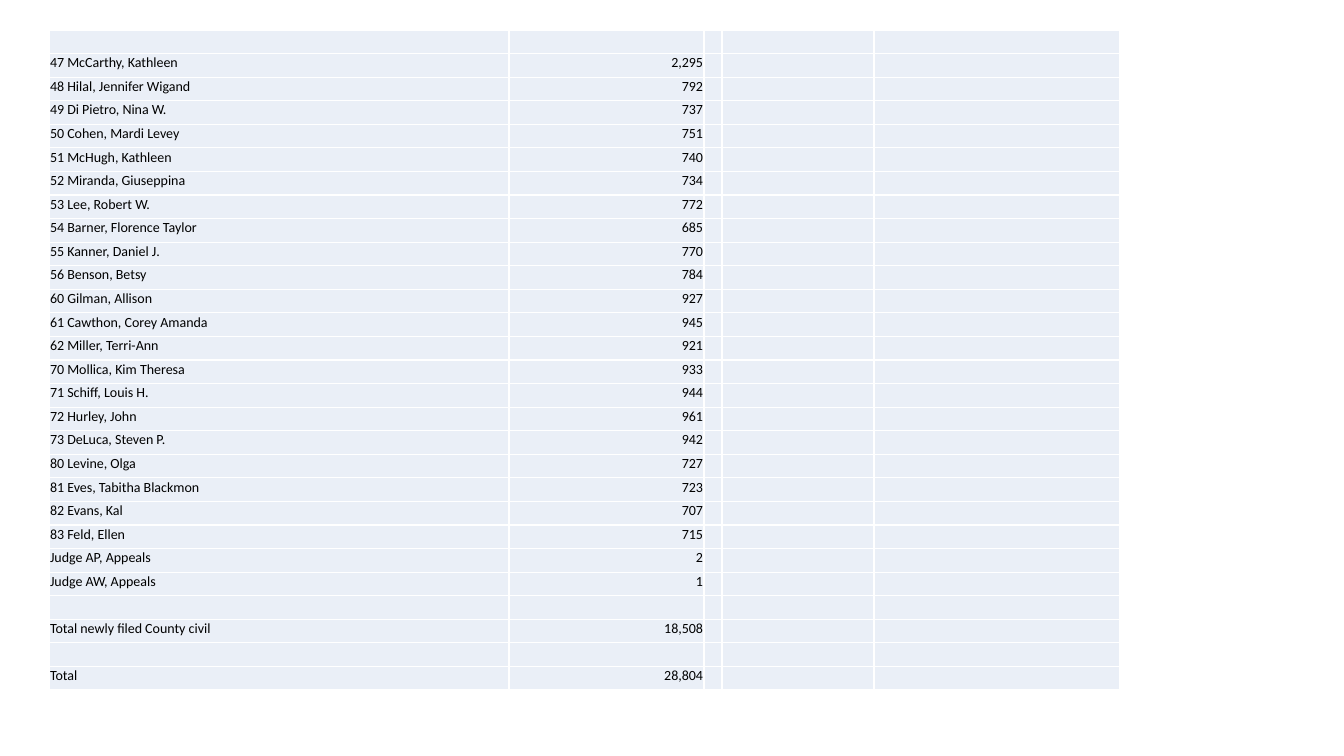
from lxml.etree import SubElement
from pptx import Presentation
from pptx.dml.color import RGBColor
from pptx.enum.text import MSO_ANCHOR, PP_ALIGN
from pptx.oxml import parse_xml
from pptx.oxml.ns import nsdecls, qn
from pptx.util import Pt

SCALE = 914400 / 100.8
PALE_BLUE = RGBColor(0xEA, 0xEF, 0xF7)
BLACK = RGBColor(0, 0, 0)
WHITE = RGBColor(0xFF, 0xFF, 0xFF)
COLUMN_WIDTHS = [460, 195, 18, 152, 246]
TABLE_HEIGHT = 661
CASELOADS = [
    ("", ""),
    ("47 McCarthy, Kathleen", "2,295"),
    ("48 Hilal, Jennifer Wigand", "792"),
    ("49 Di Pietro, Nina W.", "737"),
    ("50 Cohen, Mardi Levey", "751"),
    ("51 McHugh, Kathleen", "740"),
    ("52 Miranda, Giuseppina", "734"),
    ("53 Lee, Robert W.", "772"),
    ("54 Barner, Florence Taylor", "685"),
    ("55 Kanner, Daniel J.", "770"),
    ("56 Benson, Betsy", "784"),
    ("60 Gilman, Allison", "927"),
    ("61 Cawthon, Corey Amanda", "945"),
    ("62 Miller, Terri-Ann", "921"),
    ("70 Mollica, Kim Theresa", "933"),
    ("71 Schiff, Louis H.", "944"),
    ("72 Hurley, John", "961"),
    ("73 DeLuca, Steven P.", "942"),
    ("80 Levine, Olga", "727"),
    ("81 Eves, Tabitha Blackmon", "723"),
    ("82 Evans, Kal", "707"),
    ("83 Feld, Ellen", "715"),
    ("Judge AP, Appeals", "2"),
    ("Judge AW, Appeals", "1"),
    ("", ""),
    ("Total newly filed County civil", "18,508"),
    ("", ""),
    ("Total", "28,804"),
]


def px(length):
    return round(length * SCALE)


def style_cell(cell):
    cell.margin_left = cell.margin_right = cell.margin_top = px(1)
    cell.margin_bottom = 0
    cell.vertical_anchor = MSO_ANCHOR.TOP
    properties = cell._tc.get_or_add_tcPr()
    for side in ("lnL", "lnR", "lnT", "lnB"):
        properties.append(parse_xml(
            f'<a:{side} {nsdecls("a")} w="{Pt(1)}"><a:solidFill>'
            f'<a:srgbClr val="{WHITE}"/></a:solidFill></a:{side}>'))
    cell.fill.solid()
    cell.fill.fore_color.rgb = PALE_BLUE


deck = Presentation()
deck.slide_width = px(1344)
deck.slide_height = px(756)
page = deck.slides.add_slide(deck.slide_layouts[6])

frame = page.shapes.add_table(
    len(CASELOADS), len(COLUMN_WIDTHS),
    px(49), px(30), px(sum(COLUMN_WIDTHS)), px(TABLE_HEIGHT))
table = frame.table
table.first_row = False
table.horz_banding = False
for column, width in zip(table.columns, COLUMN_WIDTHS):
    column.width = px(width)

for row, caseload in zip(table.rows, CASELOADS):
    row.height = px(TABLE_HEIGHT / len(CASELOADS))
    for index, cell in enumerate(row.cells):
        style_cell(cell)
        para = cell.text_frame.paragraphs[0]
        if index < len(caseload) and caseload[index]:
            para.text = caseload[index]
            para.alignment = PP_ALIGN.RIGHT if index == 1 else PP_ALIGN.LEFT
            span = para.runs[0]
            span.font.name = "Calibri"
            span.font.size = Pt(10)
            span.font.color.rgb = BLACK
        else:
            SubElement(para._p, qn("a:endParaRPr"), sz="1000")

deck.save("out.pptx")
